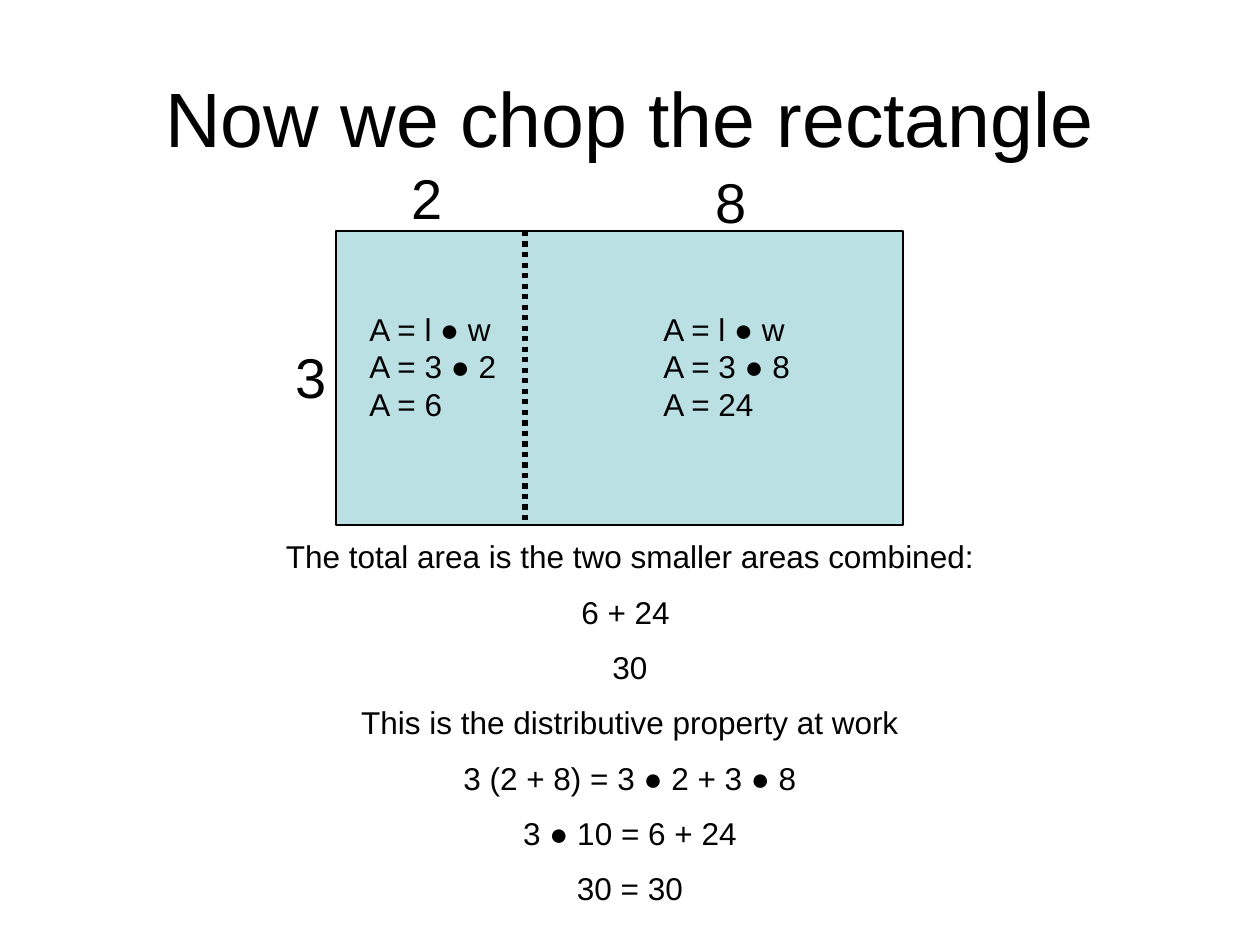
from dataclasses import dataclass

from lxml import etree
from pptx import Presentation
from pptx.dml.color import RGBColor
from pptx.enum.dml import MSO_LINE
from pptx.enum.shapes import MSO_CONNECTOR, MSO_SHAPE
from pptx.enum.text import MSO_ANCHOR, PP_ALIGN
from pptx.oxml.ns import qn
from pptx.util import Inches, Pt

LEFT, CENTER = PP_ALIGN.LEFT, PP_ALIGN.CENTER
MIDDLE = MSO_ANCHOR.MIDDLE
RECTANGLE, STRAIGHT = MSO_SHAPE.RECTANGLE, MSO_CONNECTOR.STRAIGHT
DOTTED = MSO_LINE.ROUND_DOT  # stored as sysDot
TITLE_ONLY = 5
COLUMNS, ROWS = 120, 90


def color(hex_text):
    return RGBColor.from_string(hex_text)


def set_all(target, values):
    for name, value in values.items():
        setattr(target, name, value)


@dataclass
class SlideBuilder:
    """Style and current slide; places are in grid columns and rows."""
    deck: object
    slide: object
    font: str = "Arial"
    ink: str = "000000"
    area_fill: str = "BBE0E3"

    def place(self, *cells):
        sizes = (self.deck.slide_width / COLUMNS, self.deck.slide_height / ROWS)
        return [round(cell * sizes[i % 2]) for i, cell in enumerate(cells)]

    def fill_text(self, frame, lines, size, align=LEFT, gap=0):
        frame.word_wrap = True
        for i, line in enumerate(lines):
            para = frame.paragraphs[0] if i == 0 else frame.add_paragraph()
            set_all(para, {"alignment": align, "space_before": Pt(gap if i else 0)})
            span = para.add_run()
            span.text = line
            set_all(span.font, {"name": self.font, "size": Pt(size)})
            span.font.color.rgb = color(self.ink)

    def title(self, text, cells, size):
        box = self.slide.shapes.title
        set_all(box, dict(zip(("left", "top", "width", "height"), self.place(*cells))))
        box.text_frame.vertical_anchor = MIDDLE
        self.fill_text(box.text_frame, [text], size, CENTER)

    def text(self, lines, cells, size, **layout):
        box = self.slide.shapes.add_textbox(*self.place(*cells))
        self.fill_text(box.text_frame, lines, size, **layout)

    def rectangle(self, cells):
        box = self.slide.shapes.add_shape(RECTANGLE, *self.place(*cells))
        box.shadow.inherit = False
        box.fill.solid()
        box.fill.fore_color.rgb = color(self.area_fill)
        box.line.color.rgb = color(self.ink)
        box.line.width = Pt(0.75)

    def dotted_line(self, cells):
        line = self.slide.shapes.add_connector(STRAIGHT, *self.place(*cells))
        line.line.color.rgb = color(self.ink)
        set_all(line.line, {"width": Pt(3), "dash_style": DOTTED})
        etree.SubElement(line._element.spPr, qn("a:effectLst"))


def main():
    deck = Presentation()
    set_all(deck, {"slide_width": Inches(10), "slide_height": Inches(7.5)})
    page = SlideBuilder(deck, deck.slides.add_slide(deck.slide_layouts[TITLE_ONLY]))
    page.title("Now we chop the rectangle", (6, 3.6, 108, 15), 44)

    # Rectangle with its side lengths
    left, top, width, height = 32, 22, 54, 28
    cut = left + 18
    page.rectangle((left, top, width, height))
    for side, column, row, span in (("2", 38, 15, 15), ("3", 27, 32, 7), ("8", 67, 15.4, 7)):
        page.text([side], (column, row, span, 7.5), 32)
    page.dotted_line((cut, top, cut, top + height))

    # Area of each part
    for side, column, span in ((8, 62, 15), (2, 34, 16)):
        steps = ["A = l ● w", f"A = 3 ● {side}", f"A = {3 * side}"]
        page.text(steps, (column, 28.9, span, 12), 18)

    # Conclusion
    page.text([
        "The total area is the two smaller areas combined:",
        "6 + 24 ",
        "30",
        "This is the distributive property at work",
        "3 (2 + 8) = 3 ● 2 + 3 ● 8",
        "3 ● 10 = 6 + 24",
        "30 = 30",
    ], (0, 50.6, COLUMNS, 37.3), 18, align=CENTER, gap=10)

    deck.save("out.pptx")


if __name__ == "__main__":
    main()
